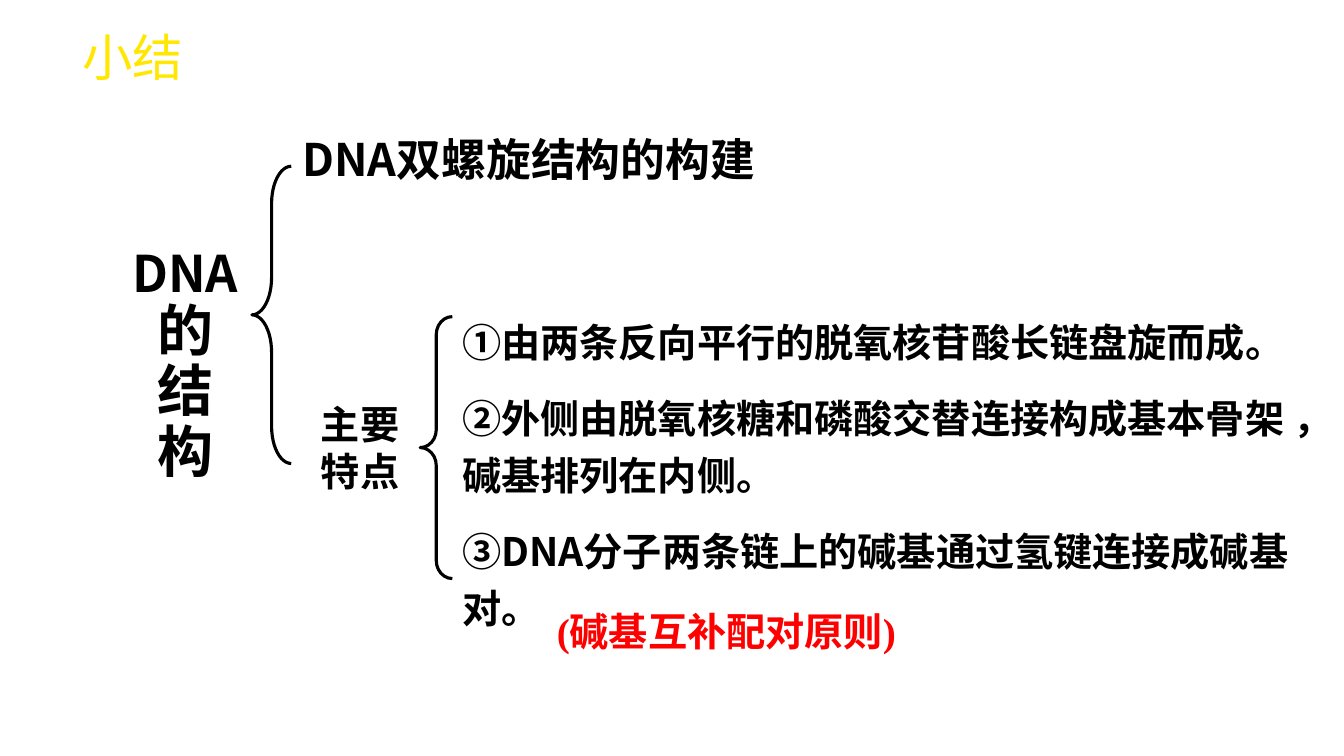
from lxml.etree import SubElement
from pptx import Presentation
from pptx.dml.color import RGBColor as RGB
from pptx.enum.shapes import MSO_SHAPE as SHAPE
from pptx.enum.text import MSO_ANCHOR as ANCHOR, PP_ALIGN as ALIGN
from pptx.oxml.ns import qn
from pptx.util import Cm, Pt

# Content: boxes are left, top, width, height in cm
TOPIC = [("DNA", "topic_latin"), ("的结构", "topic")]
TOPIC_BOX = (3.02, 4.83, 3.3, 8.81)
FEATURES = [
    "①由两条反向平行的脱氧核苷酸长链盘旋而成。",
    "②外侧由脱氧核糖和磷酸交替连接构成基本骨架 ，碱基排列在内侧。",
    "③DNA分子两条链上的碱基通过氢键连接成碱基对。",
]
# Each text: paragraphs, box, style, paragraph options
TEXTS = [
    (["主要特点"], (7.59, 9.96, 2.97, 2.64), "body", {"align": ALIGN.CENTER}),
    (FEATURES, (11.4, 7.67, 22.05, 7.19), "body", {"spacing": 1.2, "gap": 14}),
    (["DNA双螺旋结构的构建"], (7.37, 3.2, 12.93, 1.63), "heading", {}),
    (["小结"], (0.58, 0.53, 5.54, 3.4), "summary",
     {"align": ALIGN.CENTER, "wrap": False}),
    (["(碱基互补配对原则)"], (13.28, 15.19, 10.34, 1.45), "rule", {"indent": 0.5}),
]
# Each brace: box, curl
BRACES = [
    ((6.35, 4.19, 0.99, 7.49), 0.95),
    ((10.59, 7.98, 0.81, 6.6), 0.56),
]

SANS, SERIF = "Noto Sans CJK SC", "Times New Roman"
BLACK, WHITE = RGB(0, 0, 0), RGB(255, 255, 255)
THEME = {  # size, Latin font, colour, bold
    "topic_latin": (36, SANS, BLACK, True),
    "topic": (40, SANS, BLACK, True),
    "heading": (32, SANS, BLACK, True),
    "body": (28, SANS, BLACK, True),
    "summary": (36, SANS, RGB(255, 231, 1), False),
    "rule": (28, SERIF, RGB(255, 0, 0), True),
}


def cm(box):
    return [Cm(v) for v in box]


def style_run(r, style):
    size, name, colour, bold = THEME[style]
    r.font.size, r.font.name, r.font.bold = Pt(size), name, bold
    r.font.color.rgb = colour
    SubElement(r._r.get_or_add_rPr(), qn("a:ea")).set("typeface", SANS)


def add_text(s, lines, box, style, align=ALIGN.LEFT, spacing=1.0, gap=0,
             indent=0, wrap=True):
    tf = s.shapes.add_textbox(*cm(box)).text_frame
    tf.word_wrap = wrap
    tf.margin_left += Cm(indent)
    tf.text = "\n".join(lines)
    for i, p in enumerate(tf.paragraphs):
        p.alignment, p.line_spacing = align, spacing
        if i:
            p.space_before = Pt(gap)
        style_run(p.runs[0], style)


def add_brace(s, box, curl):
    sp = s.shapes.add_shape(SHAPE.LEFT_BRACE, *cm(box))
    sp.adjustments[0] = curl
    sp.shadow.inherit = False
    sp.fill.background()
    sp.line.color.rgb = BLACK
    sp.line.width = Pt(2.25)


def add_topic(s):
    sp = s.shapes.add_shape(SHAPE.RECTANGLE, *cm(TOPIC_BOX))
    sp.shadow.inherit = False
    sp.fill.solid()
    sp.fill.fore_color.rgb = WHITE
    sp.line.fill.background()
    tf = sp.text_frame
    tf.word_wrap, tf.vertical_anchor = True, ANCHOR.MIDDLE
    p = tf.paragraphs[0]
    p.alignment, p.line_spacing = ALIGN.CENTER, 0.9
    for text, style in TOPIC:
        r = p.add_run()
        r.text = text
        style_run(r, style)


def main():
    prs = Presentation()
    prs.slide_width, prs.slide_height = Cm(33.87), Cm(19.05)
    s = prs.slides.add_slide(prs.slide_layouts[6])
    # Topic on the left, then braces and branches
    add_topic(s)
    for box, curl in BRACES:
        add_brace(s, box, curl)
    for lines, box, style, options in TEXTS:
        add_text(s, lines, box, style, **options)
    prs.save("out.pptx")


if __name__ == "__main__":
    main()
